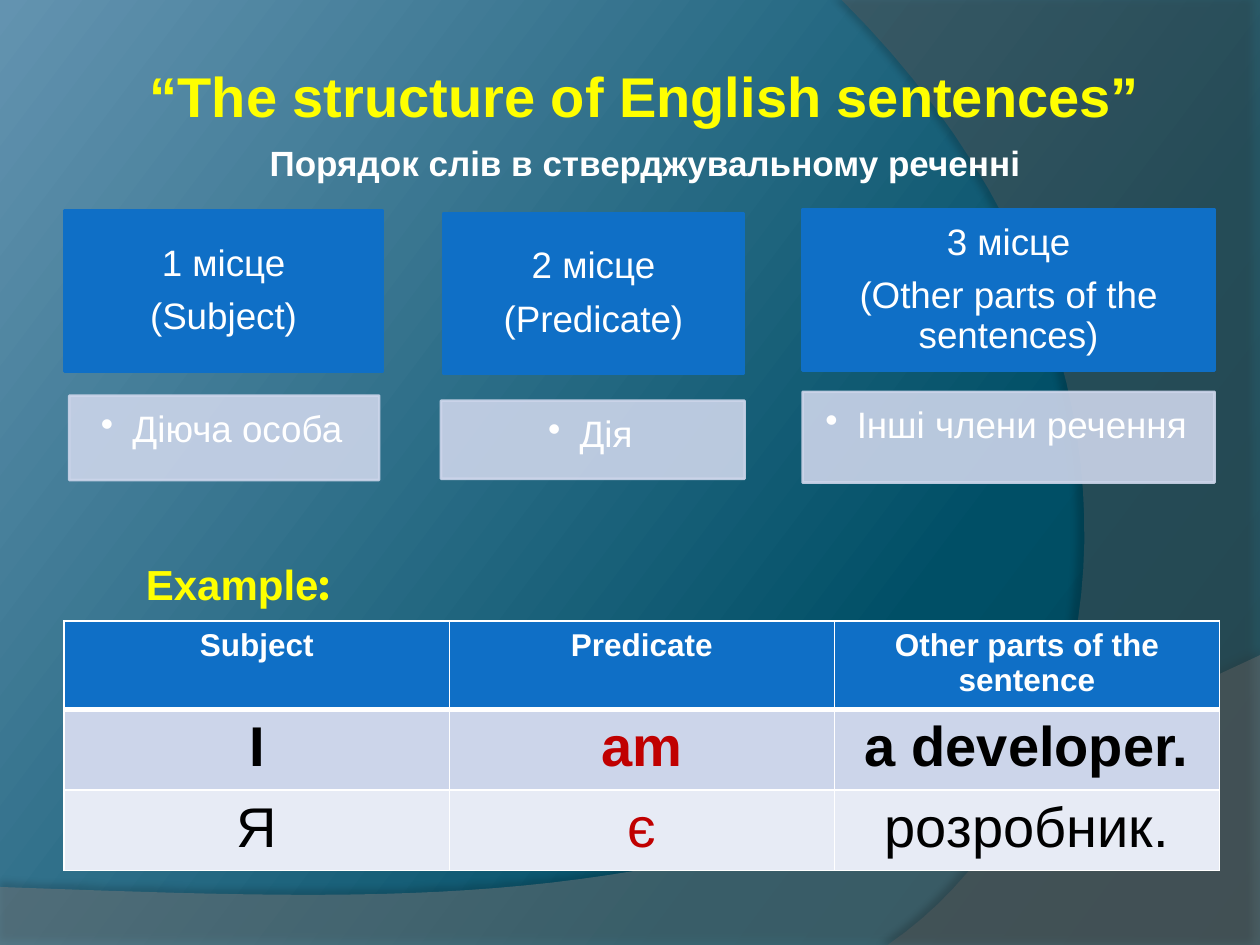
import collections
import copy
import dataclasses
import pptx
import pptx.dml.color
import pptx.enum.shapes
import pptx.enum.text
import pptx.oxml
import pptx.oxml.ns
import pptx.util
import lxml.etree

Box = collections.namedtuple("Box", "left top width height")
ALIGN = pptx.enum.text.PP_ALIGN
ANCHOR = pptx.enum.text.MSO_ANCHOR
qn = pptx.oxml.ns.qn


@dataclasses.dataclass(frozen=True)
class Theme:
    font: str = "Arial"
    colon_font: str = "Montserrat"
    accent: str = "FFFF00"
    light: str = "FFFFFF"
    dark: str = "000000"
    verb: str = "C00000"
    blue: str = "0F6FC6"
    pale: str = "CCD5EA"
    paler: str = "E7EBF5"
    ground: tuple = ((0, "004355"), (0.3, "004F66"), (1, "6393B0"))
    low_wave: str = "7F7F7F"
    side_wave: str = "5E5E5E"
    heading: int = 32
    example: int = 24
    place: int = 21
    subheading: int = 20
    column: int = 18


THEME = Theme()
COLUMN = pptx.util.Inches(10) // 100
ROW = pptx.util.Inches(7.5) // 75


def on_grid(box):
    return [round(n * unit) for n, unit in zip(box, (COLUMN, ROW, COLUMN, ROW))]


def rgb(color):
    return pptx.dml.color.RGBColor.from_string(color)


def child(parent, tag, **attributes):
    return lxml.etree.SubElement(parent, qn(tag), {k: str(v) for k, v in attributes.items()})


def set_opacity(shape, percent):
    for color in shape._element.spPr.iter(qn("a:srgbClr")):
        child(color, "a:alpha", val=percent * 1000)


def write(frame, lines, size, color=THEME.light, bold=False, align=ALIGN.CENTER,
          anchor=ANCHOR.TOP, margins=(0.1, 0.05, 0.1, 0.05), spacing=None,
          after=0, bullet=False, tail=None):
    frame.word_wrap = True
    frame.vertical_anchor = anchor
    (frame.margin_left, frame.margin_top,
     frame.margin_right, frame.margin_bottom) = map(pptx.util.Inches, margins)
    for number, line in enumerate(lines):
        paragraph = frame.add_paragraph() if number else frame.paragraphs[0]
        paragraph.alignment = align
        paragraph.line_spacing = spacing
        paragraph.space_before = pptx.util.Pt(0)
        paragraph.space_after = pptx.util.Pt(after)
        if bullet:
            properties = paragraph._p.get_or_add_pPr()
            indent = pptx.util.Inches(0.25)
            properties.set("marL", str(indent))
            properties.set("indent", str(-indent))
            child(properties, "a:buChar", char="•")
        for text, font in [(line, THEME.font)] + ([tail] if tail else []):
            run = paragraph.add_run()
            run.text = text
            run.font.name = font
            run.font.size = pptx.util.Pt(size)
            run.font.bold = bold
            run.font.color.rgb = rgb(color)


def paint_ground(slide):
    fill = slide.background.fill
    fill.gradient()
    fill.gradient_angle = 360 - 217
    stops = slide._element.find(".//" + qn("a:gsLst"))
    stops.append(copy.deepcopy(stops[-1]))
    for stop, (position, color) in zip(fill.gradient_stops, THEME.ground):
        stop.position = position
        stop.color.rgb = rgb(color)


def draw_wave(slide, box, corners, bend, color, opacity, shade, distance, direction):
    left, top, width, height = on_grid(box)
    curve = [corners[-1], *bend]
    steps = 40
    outline = list(corners)
    for step in range(1, steps + 1):
        t = step / steps
        weights = ((1 - t) ** 3, 3 * t * (1 - t) ** 2, 3 * t * t * (1 - t), t ** 3)
        outline.append([sum(w * point[axis] for w, point in zip(weights, curve))
                        for axis in (0, 1)])
    points = [(round(left + x * width), round(top + y * height)) for x, y in outline]
    builder = slide.shapes.build_freeform(*points[0], scale=1.0)
    builder.add_line_segments(points[1:], close=True)
    wave = builder.convert_to_shape()
    wave.fill.solid()
    wave.fill.fore_color.rgb = rgb(color)
    wave.line.fill.background()
    set_opacity(wave, opacity)
    effects = child(wave._element.spPr, "a:effectLst")
    shadow = child(effects, "a:outerShdw", blurRad=pptx.util.Pt(4),
                   dist=pptx.util.Pt(distance), dir=direction * 60000,
                   algn="ctr", rotWithShape=0)
    child(child(shadow, "a:srgbClr", val=THEME.dark), "a:alpha", val=shade * 1000)


def place_title(slide, box, text):
    title = slide.shapes.title
    title.left, title.top, title.width, title.height = on_grid(box)
    slide.shapes._spTree.append(title._element)
    write(title.text_frame, [text], THEME.heading, THEME.accent, bold=True)


def add_label(slide, box, text, size, **style):
    label = slide.shapes.add_textbox(*on_grid(box))
    write(label.text_frame, [text], size, bold=True, **style)


def add_panel(slide, box, lines, color, opacity=100, **style):
    panel = slide.shapes.add_shape(pptx.enum.shapes.MSO_SHAPE.RECTANGLE, *on_grid(box))
    panel.shadow.inherit = False
    panel.fill.solid()
    panel.fill.fore_color.rgb = rgb(color)
    panel.line.color.rgb = rgb(color)
    panel.line.width = pptx.util.Pt(1.5)
    set_opacity(panel, opacity)
    write(panel.text_frame, lines, THEME.place, spacing=0.9, **style)


def add_place(slide, place_box, role_box, place, role):
    add_panel(slide, place_box, place, THEME.blue, anchor=ANCHOR.MIDDLE,
              margins=(0.16, 0.09, 0.16, 0.09), after=8)
    add_panel(slide, role_box, [role], THEME.pale, opacity=90, bullet=True,
              margins=(0.12, 0.12, 0.16, 0.18), after=3)


def set_borders(cell, **widths):
    properties = cell._tc.get_or_add_tcPr()
    for index, side in enumerate("LRTB"):
        edge = properties.makeelement(
            qn("a:ln" + side), {"w": str(pptx.util.Pt(widths.get(side, 1)))})
        child(child(edge, "a:solidFill"), "a:srgbClr", val=THEME.light)
        properties.insert(index, edge)


def add_examples(slide, box, row_heights, rows):
    table = slide.shapes.add_table(len(rows), len(rows[0]), *on_grid(box)).table
    table.horz_banding = False
    for row, height in zip(table.rows, row_heights):
        row.height = round(height * ROW)
    looks = [(THEME.blue, THEME.column, True, (THEME.light,) * 3, {"B": 3}),
             (THEME.pale, THEME.heading, True, (THEME.dark, THEME.verb, THEME.dark), {"T": 3}),
             (THEME.paler, THEME.heading, False, (THEME.dark, THEME.verb, THEME.dark), {})]
    for r, (words, (fill, size, bold, colors, borders)) in enumerate(zip(rows, looks)):
        for c, (word, color) in enumerate(zip(words, colors)):
            cell = table.cell(r, c)
            cell.fill.solid()
            cell.fill.fore_color.rgb = rgb(fill)
            set_borders(cell, **borders)
            write(cell.text_frame, [word], size, color, bold=bold)


def build_sentence_slide(deck):
    slide = deck.slides.add_slide(deck.slide_layouts[5])
    paint_ground(slide)
    draw_wave(slide, Box(0, 52, 100, 23), [(1, 0), (1, 1), (0, 1), (0, 0.8)][::-1],
              [(0.56, 0.9), (0.39, 0.86), (0, 0.8)], THEME.low_wave, 45, 35, 3.5, 270)
    draw_wave(slide, Box(66.8, 0, 33.2, 75), [(0, 0), (1, 0), (1, 1), (0.11, 1)],
              [(0.67, 0.83), (0.84, 0.37), (0, 0)], THEME.side_wave, 40, 45, 4, 180)
    place_title(slide, Box(8.3, 4.4, 85.8, 6.4), "“The structure of English sentences”")
    add_label(slide, Box(10.6, 43.8, 19.7, 5), "Example", THEME.example,
              color=THEME.accent, align=ALIGN.LEFT, tail=(":", THEME.colon_font))
    add_examples(slide, Box(5.1, 49.3, 91.7, 19.7), (6.9, 6.4, 6.4), [
        ("Subject", "Predicate", "Other parts of the sentence"),
        ("I", "am", "a developer."),
        ("Я", "є", "розробник.")])
    add_label(slide, Box(19.3, 10.7, 63.8, 4.4),
              "Порядок слів в стверджувальному реченні", THEME.subheading)
    add_place(slide, Box(5.1, 16.7, 25.3, 12.8), Box(5.5, 31.4, 24.6, 6.7),
              ["1 місце", "(Subject)"], "Діюча особа")
    add_place(slide, Box(35.2, 16.9, 23.8, 12.8), Box(35, 31.8, 24.1, 6.2),
              ["2 місце", "(Predicate)"], "Дія")
    add_place(slide, Box(63.7, 16.6, 32.7, 12.8), Box(63.7, 31.1, 32.7, 7.2),
              ["3 місце", "(Other parts of the sentences)"], "Інші члени речення")


def main():
    deck = pptx.Presentation()
    deck.slide_width = COLUMN * 100
    deck.slide_height = ROW * 75
    build_sentence_slide(deck)
    deck.save("out.pptx")


if __name__ == "__main__":
    main()
